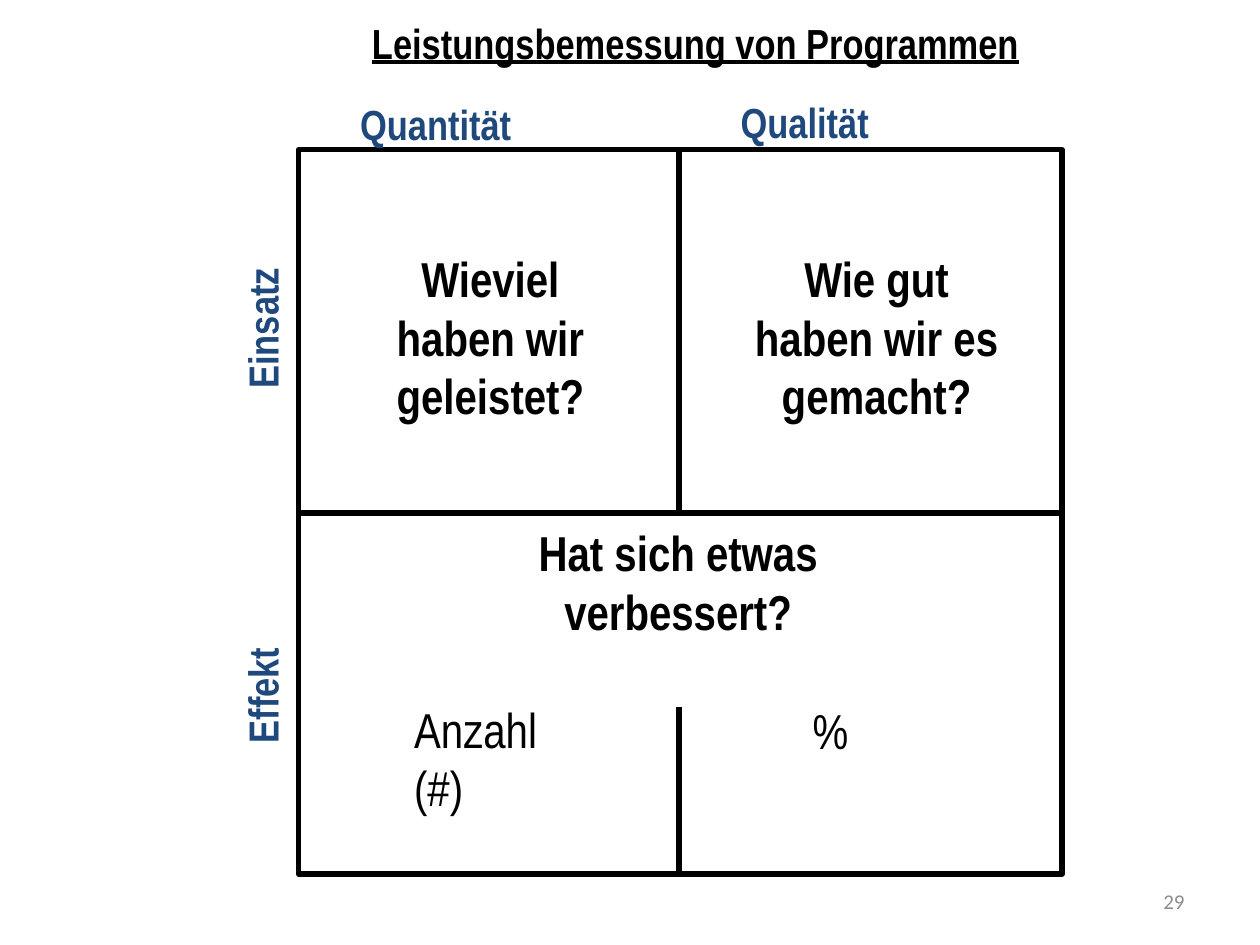
import pptx
import pptx.util
import pptx.dml.color
import pptx.enum.shapes
import pptx.enum.text
import lxml.etree

Cm, Pt = pptx.util.Cm, pptx.util.Pt
ALIGN = pptx.enum.text.PP_ALIGN
ANCHOR = pptx.enum.text.MSO_ANCHOR

COLORS = {"black": "000000", "blue": "1F497D", "gray": "8C8C8C"}

# Matrix frame and its dividers, in cm
LEFT, TOP, WIDTH, HEIGHT = 6.02, 3.02, 15.39, 14.6
MID_X, MID_Y = 13.69, 10.34


def color(name):
    return pptx.dml.color.RGBColor.from_string(COLORS[name])


def style_line(line):
    line.color.rgb = color("black")
    line.width = Pt(3)


def add_frame(s):
    sp = s.shapes.add_shape(pptx.enum.shapes.MSO_SHAPE.RECTANGLE,
                            Cm(LEFT), Cm(TOP), Cm(WIDTH), Cm(HEIGHT))
    sp.shadow.inherit = False
    sp.fill.background()
    style_line(sp.line)


def add_divider(s, x1, y1, x2, y2):
    sp = s.shapes.add_connector(pptx.enum.shapes.MSO_CONNECTOR.STRAIGHT,
                                Cm(x1), Cm(y1), Cm(x2), Cm(y2))
    style_line(sp.line)
    lxml.etree.SubElement(sp._element.spPr, pptx.oxml.ns.qn("a:effectLst"))


def add_text(s, text, x, y, w, h, size=28, bold=True, ink="black",
             align=ALIGN.CENTER, font="Arial Narrow", underline=None,
             anchor=ANCHOR.TOP, rotation=0):
    sp = s.shapes.add_textbox(Cm(x), Cm(y), Cm(w), Cm(h))
    sp.rotation = rotation
    tf = sp.text_frame
    tf.word_wrap = True
    tf.vertical_anchor = anchor
    p = tf.paragraphs[0]
    p.text = text
    p.alignment = align
    for r in p.runs:
        r.font.name = font
        r.font.size = Pt(size)
        r.font.bold = bold
        r.font.underline = underline
        r.font.color.rgb = color(ink)


def add_row_label(s, text, center_y):
    w, h, center_x = 4, 1.27, 5.28
    add_text(s, text, center_x - w / 2, center_y - h / 2, w, h,
             size=24, ink="blue", rotation=270)


def main():
    prs = pptx.Presentation()
    prs.slide_width, prs.slide_height = Cm(25.4), Cm(19.05)
    s = prs.slides.add_slide(prs.slide_layouts[6])

    # Matrix
    add_divider(s, LEFT, MID_Y, LEFT + WIDTH, MID_Y)
    add_frame(s)
    add_divider(s, MID_X, TOP, MID_X, MID_Y)
    add_divider(s, MID_X, 14.25, MID_X, TOP + HEIGHT)

    # Title
    add_text(s, "Leistungsbemessung von Programmen", 5.13, 0.23, 17.78, 1.27,
             size=24, underline=True)

    # Column and row labels
    for text, x, y in (("Quantität", 7.01, 1.86), ("Qualität", 14.68, 1.83)):
        add_text(s, text, x, y, 5.59, 1.27, size=24, ink="blue",
                 align=ALIGN.LEFT)
    add_row_label(s, "Einsatz", 6.62)
    add_row_label(s, "Effekt", 14.02)

    # Questions
    add_text(s, "Wieviel haben wir geleistet?", 7.32, 4.88, 5.13, 3.84)
    add_text(s, "Wie gut haben wir es gemacht?", 14.81, 4.88, 5.72, 3.84)
    add_text(s, "Hat sich etwas verbessert?", 9.96, 10.41, 7.42, 2.64)

    # Units of the effect
    add_text(s, "Anzahl\v(#)", 8.1, 13.97, 3.25, 2.64, bold=False,
             align=ALIGN.LEFT)
    add_text(s, "%", 16.13, 14, 2.77, 1.45, bold=False, align=ALIGN.LEFT)

    # Slide number
    add_text(s, "29", 18.21, 17.65, 5.92, 1.02, size=12, bold=False,
             ink="gray", align=ALIGN.RIGHT, font="Calibri",
             anchor=ANCHOR.MIDDLE)

    prs.save("out.pptx")


if __name__ == "__main__":
    main()
